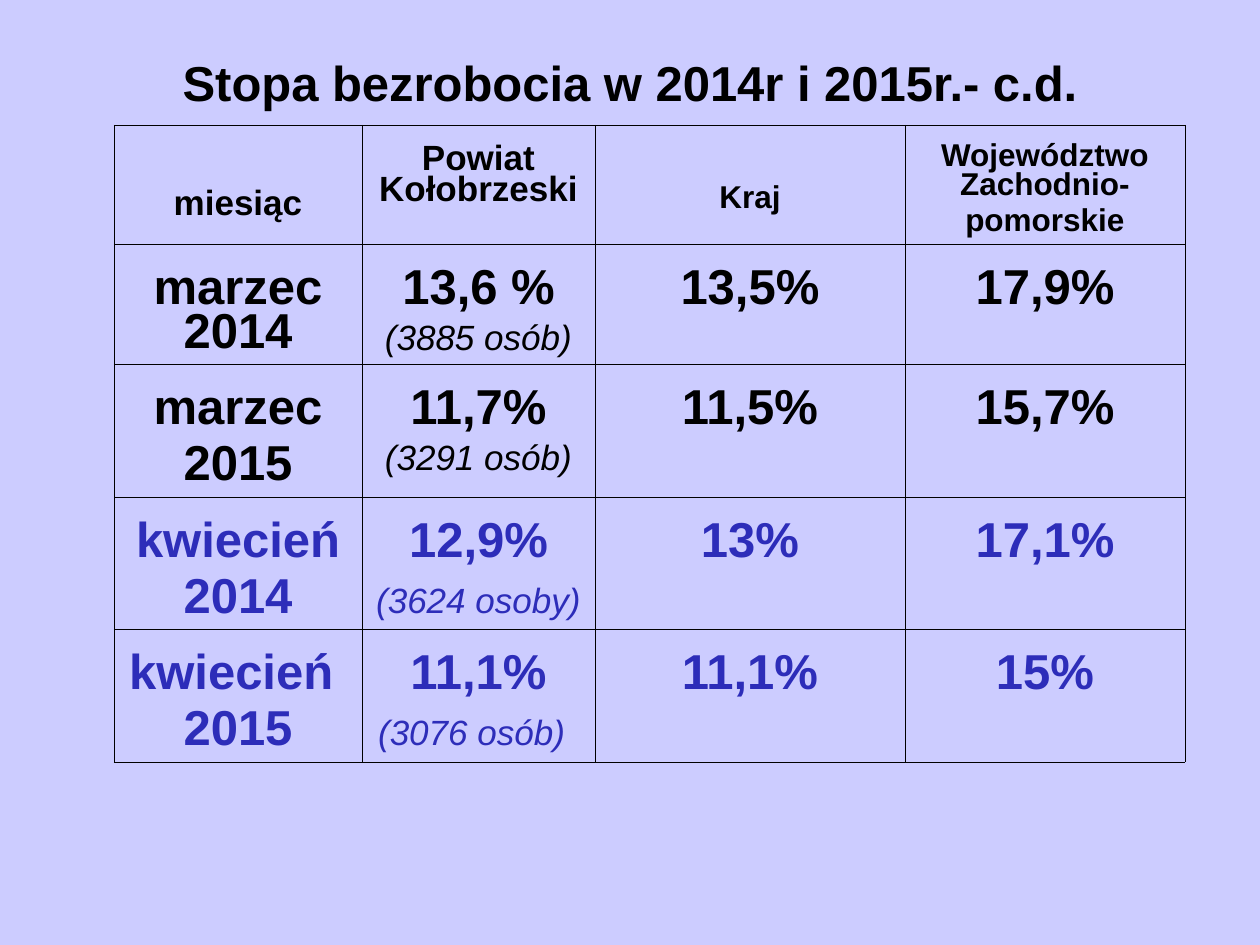
import pptx
import pptx.dml.color
import pptx.enum.text
import pptx.oxml
import pptx.oxml.ns
import pptx.util

EMU_PER_PX = 914400 / 126
FONT = "Arial"
BLACK, BLUE, LAVENDER = "000000", "2D2DB9", "CCCCFF"
COLUMN_WIDTHS = [248, 233, 310, 280]
ROW_HEIGHTS = [119, 120, 133, 132, 133]
OUTER_LINE, INNER_LINE = 0.23, 0.11

# Header cells: lines, text size, top margin, space before
HEADERS = [
    (["miesiąc"], 20, 65, 4.5),
    (["Powiat Kołobrzeski"], 20, 20, 5),
    (["Kraj"], 18, 61, 4.5),
    (["Województwo Zachodnio-", "pomorskie"], 18, 19, 4.5),
]
# Month lines, county rate, people, country rate, region rate, colour
RATES = [
    (["marzec 2014"], "13,6 %", "(3885 osób)", "13,5%", "17,9%", BLACK),
    (["marzec", "2015"], "11,7%", "(3291 osób)", "11,5%", "15,7%", BLACK),
    (["kwiecień", "2014"], "12,9%", "(3624 osoby)", "13%", "17,1%", BLUE),
    (["kwiecień ", "2015"], "11,1%", "(3076 osób)", "11,1%", "15%", BLUE),
]


def px(length):
    return pptx.util.Emu(round(length * EMU_PER_PX))


def rgb(color):
    return pptx.dml.color.RGBColor.from_string(color)


def add_text(para, text, size=28, color=BLACK, bold=True, italic=False):
    span = para.add_run()
    span.text = text
    span.font.name = FONT
    span.font.size = pptx.util.Pt(size)
    span.font.bold = bold
    span.font.italic = italic
    span.font.color.rgb = rgb(color)


def add_title(page, text):
    box = page.shapes.title
    box.left, box.top, box.width, box.height = px(63), px(38), px(1134), px(87)
    frame = box.text_frame
    frame.word_wrap = True
    frame.vertical_anchor = pptx.enum.text.MSO_ANCHOR.MIDDLE
    para = frame.paragraphs[0]
    para.alignment = pptx.enum.text.PP_ALIGN.CENTER
    add_text(para, text)


def set_borders(cell, widths):
    properties = cell._tc.get_or_add_tcPr()
    for side, width in zip("LRTB", widths):
        properties.append(pptx.oxml.parse_xml(
            f'<a:ln{side} {pptx.oxml.ns.nsdecls("a")} w="{pptx.util.Pt(width)}">'
            f'<a:solidFill><a:srgbClr val="{BLACK}"/></a:solidFill></a:ln{side}>'))


def fill_cell(cell, lines, top, before):
    """Each line is a list of (text, format) pairs and becomes a paragraph."""
    cell.margin_left = cell.margin_right = px(13)
    cell.margin_top, cell.margin_bottom = px(top), px(6)
    frame = cell.text_frame
    for index, line in enumerate(lines):
        para = frame.add_paragraph() if index else frame.paragraphs[0]
        para.alignment = pptx.enum.text.PP_ALIGN.CENTER
        para.line_spacing = 0.81
        para.space_before = pptx.util.Pt(before)
        for text, style in line:
            add_text(para, text, **style)


def add_grid(page):
    rows, columns = len(ROW_HEIGHTS), len(COLUMN_WIDTHS)
    table = page.shapes.add_table(
        rows, columns, px(114), px(125),
        px(sum(COLUMN_WIDTHS)), px(sum(ROW_HEIGHTS))).table
    table.first_row = table.horz_banding = False
    for column, width in zip(table.columns, COLUMN_WIDTHS):
        column.width = px(width)
    for row, height in zip(table.rows, ROW_HEIGHTS):
        row.height = px(height)
    for r in range(rows):
        for c in range(columns):
            cell = table.cell(r, c)
            edges = (c == 0, c == columns - 1, r == 0, r == rows - 1)
            set_borders(cell, [OUTER_LINE if edge else INNER_LINE for edge in edges])
            cell.fill.background()
    return table


def fill_rates(table):
    for r, (month, county, people, country, region, color) in enumerate(RATES, 1):
        large = {"color": color}
        small = {"color": color, "size": 20, "bold": False, "italic": True}
        count = [(people, small)]
        if color == BLUE:
            count.append((" ", large))  # gives the line its full height
        contents = [
            [[(line, large)] for line in month],
            [[(county, large)], count],
            [[(country, large)]],
            [[(region, large)]],
        ]
        for c, lines in enumerate(contents):
            fill_cell(table.cell(r, c), lines, top=25, before=7)


def main():
    deck = pptx.Presentation()
    deck.slide_width, deck.slide_height = px(1260), px(945)
    page = deck.slides.add_slide(deck.slide_layouts[5])
    page.background.fill.solid()
    page.background.fill.fore_color.rgb = rgb(LAVENDER)

    # Title
    add_title(page, "Stopa bezrobocia w 2014r i 2015r.- c.d.")

    # Table
    table = add_grid(page)
    for c, (lines, size, top, before) in enumerate(HEADERS):
        fill_cell(table.cell(0, c), [[(line, {"size": size})] for line in lines],
                  top, before)
    fill_rates(table)

    deck.save("out.pptx")


if __name__ == "__main__":
    main()
